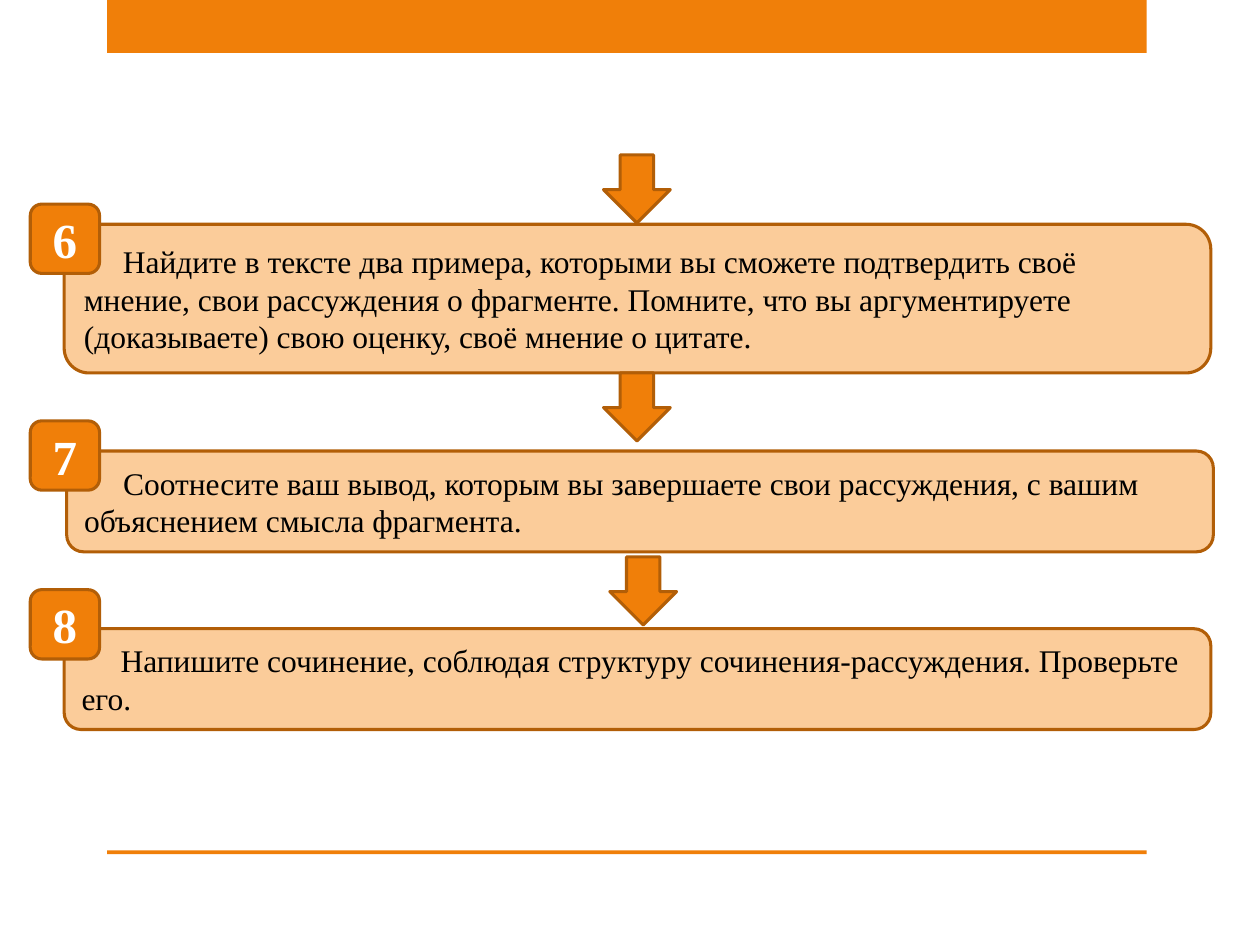
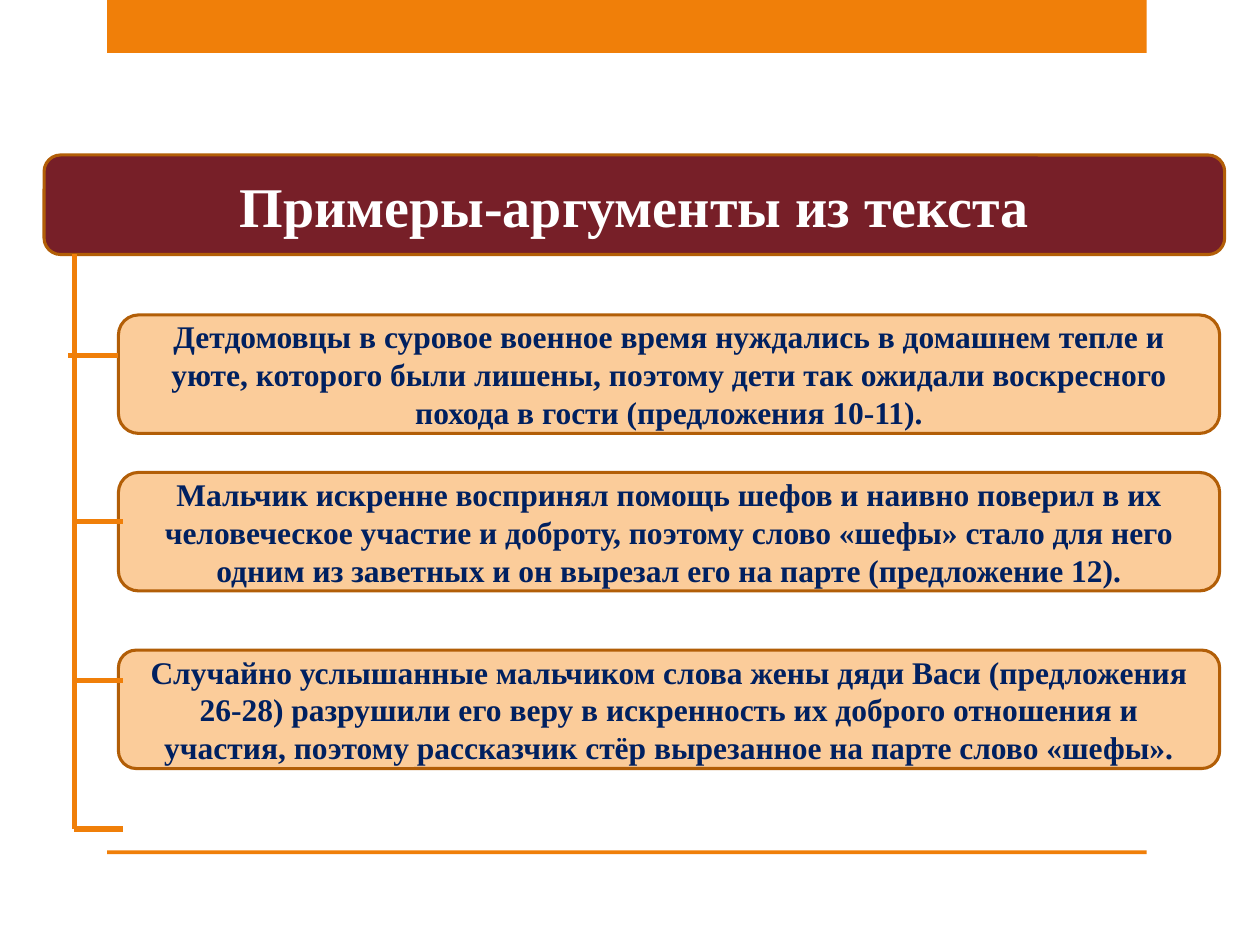
from lxml import etree
from pptx import Presentation
from pptx.dml.color import RGBColor
from pptx.enum.shapes import MSO_CONNECTOR, MSO_SHAPE
from pptx.enum.text import MSO_ANCHOR, PP_ALIGN
from pptx.oxml.ns import qn
from pptx.util import Inches, Pt

RECT, ROUND = MSO_SHAPE.RECTANGLE, MSO_SHAPE.ROUNDED_RECTANGLE
ARROW, LINE = MSO_SHAPE.DOWN_ARROW, MSO_CONNECTOR.STRAIGHT
LEFT, CENTER = PP_ALIGN.LEFT, PP_ALIGN.CENTER
MIDDLE = MSO_ANCHOR.MIDDLE

COLS, ROWS = 100, 75
WIDTH, HEIGHT = Inches(10), Inches(7.5)
FONT = "Times New Roman"
ORANGE, BROWN, PEACH, WINE = "F07F09", "B25E07", "FBCC9A", "771F28"
BLACK, WHITE, NAVY = "000000", "FFFFFF", "002060"

# number, text, card (left, top, height), badge top, arrow (left, top)
STEPS = [
    ("6", "Найдите в тексте два примера, которыми вы сможете подтвердить своё "
     "мнение, свои рассуждения о фрагменте. Помните, что вы аргументируете "
     "(доказываете) свою оценку, своё мнение о цитате.",
     (5.1, 17.8, 11.8), 16.2, (47.9, 12.3)),
    ("7", "Соотнесите ваш вывод, которым вы завершаете свои рассуждения, "
     "с вашим объяснением смысла фрагмента.",
     (5.3, 35.8, 8), 33.4, (47.9, 29.6)),
    ("8", "Напишите сочинение, соблюдая структуру сочинения-рассуждения. "
     "Проверьте его.",
     (5.1, 49.9, 8), 46.8, (48.4, 44.2)),
]

# text, card top, corner
PROOFS = [
    ("Детдомовцы в суровое военное время нуждались в домашнем тепле и уюте, "
     "которого были лишены, поэтому дети так ожидали воскресного похода "
     "в гости (предложения 10-11).", 25, 0.17),
    ("Мальчик искренне воспринял помощь шефов и наивно поверил в их "
     "человеческое участие и доброту, поэтому слово «шефы» стало для него "
     "одним из заветных и он вырезал его на парте (предложение 12).", 37.5, 0.17),
    ("Случайно услышанные мальчиком слова жены дяди Васи (предложения 26-28) "
     "разрушили его веру в искренность их доброго отношения и участия, "
     "поэтому рассказчик стёр вырезанное на парте слово «шефы».", 51.6, 0.15),
]

# Bracket beside the cards: trunk column, then ticks (start, end, row)
TRUNK, TOP, END = 5.9, 20.2, 65.8
TICKS = [(5.4, 9.4, 28.2)] + [(TRUNK, 9.8, row) for row in (41.4, 54, END)]


def color(code):
    return RGBColor.from_string(code)


def col(n):
    return round(WIDTH * n / COLS)


def row(n):
    return round(HEIGHT * n / ROWS)


def block(slide, kind, box, fill, edge=None):
    left, top, width, height = box
    shape = slide.shapes.add_shape(kind, col(left), row(top), col(width), row(height))
    shape.shadow.inherit = False
    shape.fill.solid()
    shape.fill.fore_color.rgb = color(fill)
    if edge:
        shape.line.color.rgb = color(edge)
        shape.line.width = Pt(1.75)
    else:
        shape.line.fill.background()
    return shape


def write(shape, text, size, ink, bold=True, align=CENTER, indent=0):
    frame = shape.text_frame
    frame.text = text
    frame.word_wrap = True
    frame.vertical_anchor = MIDDLE
    para = frame.paragraphs[0]
    para.alignment = align
    if indent:
        para._p.get_or_add_pPr().set("indent", str(col(indent)))
    font = para.runs[0].font
    font.name, font.size, font.bold = FONT, Pt(size), bold
    font.color.rgb = color(ink)


def rule(slide, x1, y1, x2, y2):
    line = slide.shapes.add_connector(LINE, col(x1), row(y1), col(x2), row(y2))
    line.line.color.rgb = color(ORANGE)
    line.line.width = Pt(3)
    etree.SubElement(line._element.spPr, qn("a:effectLst"))


def page(deck):
    """Add a slide with the shared top band and bottom rule."""
    slide = deck.slides.add_slide(deck.slide_layouts[6])
    for top, height in ((0, 4.2), (67.5, 0.3)):
        block(slide, RECT, (8.5, top, 82.5, height), ORANGE)
    return slide


def step(slide, number, text, card, badge, arrow):
    left, top, height = card
    body = block(slide, ROUND, (left, top, 91, height), PEACH, BROWN)
    write(body, text, 18, BLACK, bold=False, align=LEFT, indent=3.1)
    mark = block(slide, ROUND, (2.4, badge, 5.5, 5.5), ORANGE, BROWN)
    write(mark, number, 28, WHITE)
    block(slide, ARROW, (*arrow, 5.3, 5.4), ORANGE, BROWN)


def proof(slide, text, top, corner):
    card = block(slide, ROUND, (9.4, top, 87.4, 9.4), PEACH, BROWN)
    card.adjustments[0] = corner
    write(card, text, 18, NAVY)


def main():
    deck = Presentation()
    deck.slide_width, deck.slide_height = WIDTH, HEIGHT

    # Steps of the work
    slide = page(deck)
    for item in STEPS:
        step(slide, *item)

    # Arguments under a heading
    slide = page(deck)
    head = block(slide, ROUND, (3.5, 12.3, 93.7, 7.9), WINE, BROWN)
    write(head, "Примеры-аргументы из текста", 32, WHITE)
    for item in PROOFS:
        proof(slide, *item)
    rule(slide, TRUNK, TOP, TRUNK, END)
    for start, stop, level in TICKS:
        rule(slide, start, level, stop, level)

    deck.save("out.pptx")


if __name__ == "__main__":
    main()
